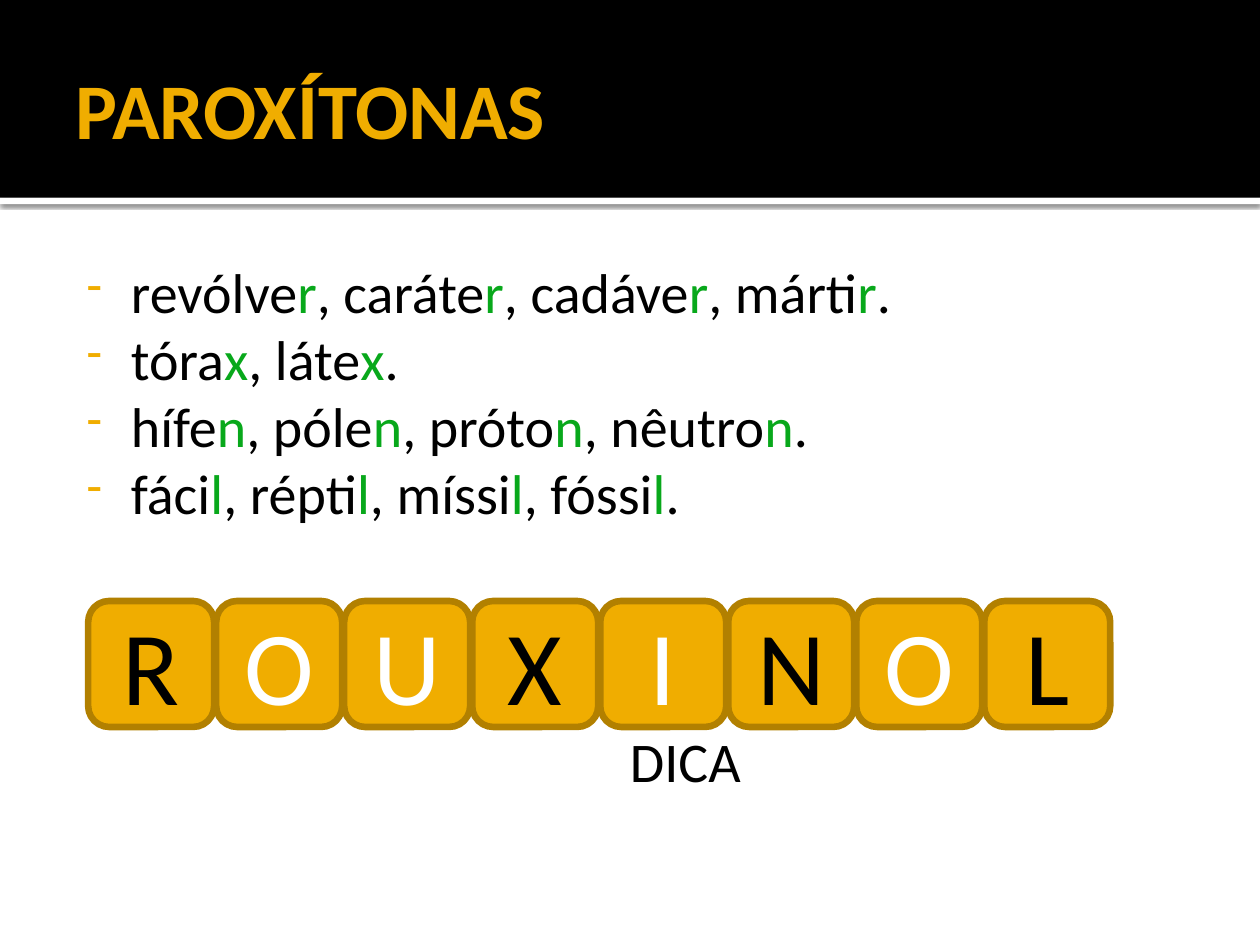
from lxml import etree
from pptx import Presentation
from pptx.dml.color import RGBColor
from pptx.enum.shapes import MSO_SHAPE as Preset
from pptx.enum.text import MSO_ANCHOR as Anchor, MSO_AUTO_SIZE as AutoSize, PP_ALIGN as Align
from pptx.oxml import parse_xml
from pptx.oxml.ns import nsdecls, qn
from pptx.util import Inches, Pt

BLACK = RGBColor(0x00, 0x00, 0x00)
WHITE = RGBColor(0xFF, 0xFF, 0xFF)
GOLD = RGBColor(0xF0, 0xAD, 0x00)
DARK_GOLD = RGBColor(0xB2, 0x80, 0x00)
GREEN = RGBColor(0x08, 0xA8, 0x1B)

COLUMNS, ROWS = 100, 75
WORD_LINES = [
    ["revólver", "caráter", "cadáver", "mártir"],
    ["tórax", "látex"],
    ["hífen", "pólen", "próton", "nêutron"],
    ["fácil", "réptil", "míssil", "fóssil"],
]
HINT_WORD = "ROUXINOL"
KEY_LETTERS = "RXNL"
TILE_LEFT, TILE_TOP, TILE_SIZE, TILE_PITCH = 7, 47.7, 10, 10.16


class SlideBuilder:
    """Holds the style, the grid and the current slide."""

    font_name = "Calibri"

    def __init__(self, presentation):
        self.cell_width = presentation.slide_width / COLUMNS
        self.cell_height = presentation.slide_height / ROWS
        self.slide = presentation.slides.add_slide(presentation.slide_layouts[5])

    def box(self, left, top, width, height):
        return (round(left * self.cell_width), round(top * self.cell_height),
                round(width * self.cell_width), round(height * self.cell_height))

    def style(self, paragraph, size, color, bold=False, align=Align.LEFT):
        font = paragraph.font
        font.name, font.size, font.bold = self.font_name, Pt(size), bold
        font.color.rgb = color
        paragraph.alignment = align

    def frame(self, shape, anchor, insets):
        frame = shape.text_frame
        frame.word_wrap, frame.auto_size = True, AutoSize.NONE
        frame.vertical_anchor = anchor
        (frame.margin_left, frame.margin_top,
         frame.margin_right, frame.margin_bottom) = map(Inches, insets)
        return frame

    def title(self, text, *place):
        title = self.slide.shapes.title
        title.left, title.top, title.width, title.height = self.box(*place)
        frame = self.frame(title, Anchor.MIDDLE, (0.1, 0.05, 0.05, 0.05))
        frame.text = text
        self.style(frame.paragraphs[0], 45, GOLD, bold=True)

    def shape(self, preset, fill, *place):
        shape = self.slide.shapes.add_shape(preset, *self.box(*place))
        shape.shadow.inherit = False
        shape.fill.solid()
        shape.fill.fore_color.rgb = fill
        shape.line.fill.background()
        return shape

    def band(self, fill, *place, shadow=False):
        band = self.shape(Preset.RECTANGLE, fill, *place)
        if shadow:
            effects = band.element.spPr.find(qn("a:effectLst"))
            effects.append(parse_xml(
                f'<a:outerShdw {nsdecls("a")} blurRad="{Pt(2.5)}" dist="{Pt(0.8)}" '
                f'dir="5400000" rotWithShape="0"><a:srgbClr val="{BLACK}">'
                '<a:alpha val="60000"/></a:srgbClr></a:outerShdw>'))
        self.slide.shapes.title.element.addprevious(band.element)

    def text_box(self, insets, *place):
        text_box = self.slide.shapes.add_textbox(*self.box(*place))
        return self.frame(text_box, Anchor.TOP, insets)

    def label(self, text, *place):
        frame = self.text_box((0.1, 0.05, 0.1, 0.05), *place)
        frame.text = text
        self.style(frame.paragraphs[0], 32, BLACK, align=Align.CENTER)

    def bullet(self, paragraph):
        properties = paragraph._p.get_or_add_pPr()
        properties.set("marL", str(Inches(0.48)))
        properties.set("indent", str(Inches(-0.35)))
        color = etree.Element(qn("a:buClr"))
        etree.SubElement(color, qn("a:srgbClr"), val=str(GOLD))
        size = etree.Element(qn("a:buSzPct"), val="80000")
        mark = etree.Element(qn("a:buChar"), char="-")
        for position, element in enumerate((color, size, mark)):
            properties.insert(position, element)

    def word_list(self, lines, *place):
        frame = self.text_box((0.06, 0.1, 0.1, 0.05), *place)
        for index, words in enumerate(lines):
            paragraph = frame.add_paragraph() if index else frame.paragraphs[0]
            self.style(paragraph, 32, BLACK)
            self.bullet(paragraph)
            separator = ""
            for word in words:
                paragraph.add_run().text = separator + word[:-1]
                ending = paragraph.add_run()
                ending.text = word[-1]
                ending.font.color.rgb = GREEN
                separator = ", "
            paragraph.add_run().text = "."

    def tile(self, letter, color, *place):
        tile = self.shape(Preset.ROUNDED_RECTANGLE, GOLD, *place)
        tile.line.color.rgb = DARK_GOLD
        tile.line.width = Pt(3.78)
        frame = self.frame(tile, Anchor.MIDDLE, (0.1, 0.05, 0.1, 0.05))
        frame.text = letter
        self.style(frame.paragraphs[0], 60, color, align=Align.CENTER)


def main():
    presentation = Presentation()
    presentation.slide_width, presentation.slide_height = Inches(10), Inches(7.5)
    builder = SlideBuilder(presentation)
    builder.band(WHITE, 0, 15.7, COLUMNS, 0.5, shadow=True)
    builder.band(BLACK, 0, 0, COLUMNS, 15.7)
    builder.title("PAROXÍTONAS", 5, 1.7, 90, 13.7)
    builder.word_list(WORD_LINES, 5, 19.4, 90, 24)
    for index, letter in enumerate(HINT_WORD):
        color = BLACK if letter in KEY_LETTERS else WHITE
        builder.tile(letter, color, TILE_LEFT + index * TILE_PITCH, TILE_TOP, TILE_SIZE, TILE_SIZE)
    builder.label("DICA", 47.4, 57.2, 14, 6.4)
    presentation.save("out.pptx")


if __name__ == "__main__":
    main()
